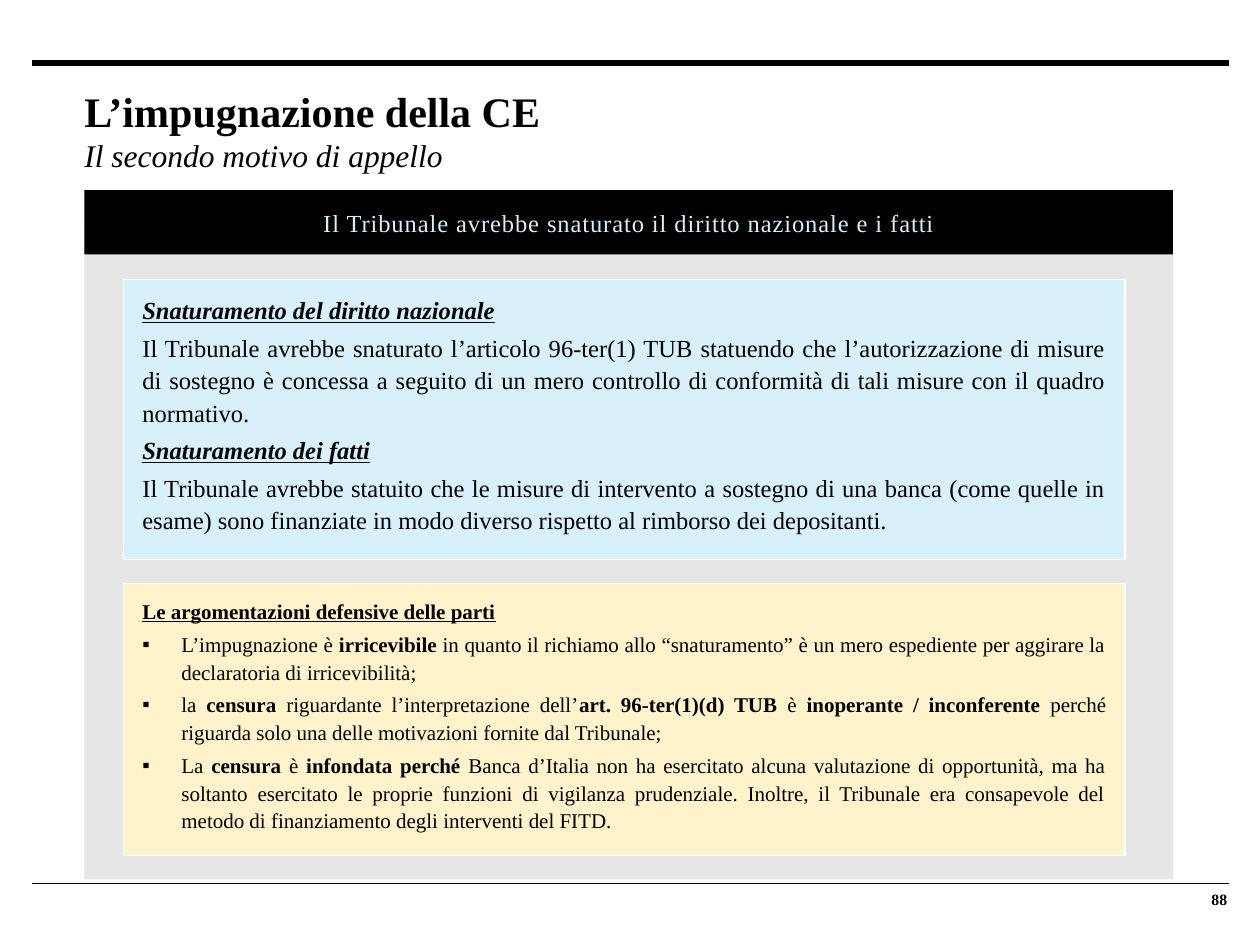
from lxml import etree
from pptx import Presentation
from pptx.dml.color import RGBColor
from pptx.enum import shapes, text
from pptx.oxml.ns import qn
from pptx.util import Pt

FONT = "Times New Roman"
BLACK, WHITE, GREY = "000000", "FFFFFF", "E6E6E6"
SKY, CREAM = "D7F0FA", "FFF3CB"
PANEL_LEFT, PANEL_WIDTH = 48.24, 622.08
CARD_LEFT, CARD_WIDTH = 70.56, 572.4
BULLET_INDENT = 22.3

# A paragraph is a list of (text, style) runs; style letters: b bold, i italic, u underlined.
DISTORTION = [
    [("Snaturamento del diritto nazionale", "biu")],
    [("Il Tribunale avrebbe snaturato l’articolo 96-ter(1) TUB statuendo che "
      "l’autorizzazione di misure di sostegno è concessa a seguito di un mero "
      "controllo di conformità di tali misure con il quadro normativo.", "")],
    [("Snaturamento dei fatti", "biu")],
    [("Il Tribunale avrebbe statuito che le misure di intervento a sostegno di una "
      "banca (come quelle in esame) sono finanziate in modo diverso rispetto al "
      "rimborso dei depositanti.", "")],
]
DEFENCE_HEADING = [[("Le argomentazioni defensive delle parti", "bu")]]
DEFENCE_POINTS = [
    [("L’impugnazione è ", ""), ("irricevibile", "b"),
     (" in quanto il richiamo allo “snaturamento” è un mero espediente per aggirare "
      "la declaratoria di irricevibilità;", "")],
    [("la ", ""), ("censura", "b"), (" riguardante l’interpretazione dell’", ""),
     ("art. 96-ter(1)(d) TUB ", "b"), ("è ", ""), ("inoperante / inconferente ", "b"),
     ("perché riguarda solo una delle motivazioni fornite dal Tribunale;", "")],
    [("La ", ""), ("censura", "b"), (" è ", ""), ("infondata perché ", "b"),
     ("Banca d’Italia non ha esercitato alcuna valutazione di opportunità, ma ha "
      "soltanto esercitato le proprie funzioni di vigilanza prudenziale. Inoltre, il "
      "Tribunale era consapevole del metodo di finanziamento degli interventi del "
      "FITD.", "")],
]


def rgb(hex_colour):
    return RGBColor.from_string(hex_colour)


def add_rule(slide, y, weight):
    rule = slide.shapes.add_connector(
        shapes.MSO_CONNECTOR.STRAIGHT, Pt(18), Pt(y), Pt(702), Pt(y))
    rule.line.color.rgb = rgb(BLACK)
    rule.line.width = Pt(weight)
    etree.SubElement(rule._element.spPr, qn("a:effectLst"))


def add_block(slide, left, top, width, height, fill, outline=None):
    block = slide.shapes.add_shape(
        shapes.MSO_SHAPE.RECTANGLE, Pt(left), Pt(top), Pt(width), Pt(height))
    block.shadow.inherit = False
    block.fill.solid()
    block.fill.fore_color.rgb = rgb(fill)
    if outline:
        block.line.color.rgb = rgb(outline)
        block.line.width = Pt(0.75)
    else:
        block.line.fill.background()
    return block


def set_frame(frame, horizontal, vertical, anchor=text.MSO_ANCHOR.TOP):
    frame.word_wrap = True
    frame.vertical_anchor = anchor
    frame.margin_left = frame.margin_right = Pt(horizontal)
    frame.margin_top = frame.margin_bottom = Pt(vertical)


def add_text_frame(slide, left, top, width, height, anchor=text.MSO_ANCHOR.TOP):
    frame = slide.shapes.add_textbox(
        Pt(left), Pt(top), Pt(width), Pt(height)).text_frame
    set_frame(frame, 0, 0, anchor)
    return frame


def write(paragraph, runs, size, colour=BLACK, align=text.PP_ALIGN.LEFT):
    paragraph.alignment = align
    for words, style in runs:
        run = paragraph.add_run()
        run.text = words
        font = run.font
        font.name, font.size = FONT, Pt(size)
        font.color.rgb = rgb(colour)
        font.bold, font.italic, font.underline = (mark in style for mark in "biu")


def add_bullet(paragraph):
    properties = paragraph._p.get_or_add_pPr()
    properties.set("marL", str(Pt(BULLET_INDENT)))
    properties.set("indent", str(-Pt(BULLET_INDENT)))
    etree.SubElement(properties, qn("a:buFont"), typeface=FONT)
    etree.SubElement(properties, qn("a:buChar"), char="▪")


def add_card(slide, top, height, fill, size, plain, bulleted=()):
    """Outlined box of justified paragraphs, the bulleted ones last."""
    frame = add_block(slide, CARD_LEFT, top, CARD_WIDTH, height, fill, WHITE).text_frame
    set_frame(frame, 10.8, 7.2)
    for index, runs in enumerate([*plain, *bulleted]):
        paragraph = frame.add_paragraph() if index else frame.paragraphs[0]
        if index >= len(plain):
            add_bullet(paragraph)
        write(paragraph, runs, size, align=text.PP_ALIGN.JUSTIFY)
        paragraph.line_spacing = 1.1
        paragraph.space_after = Pt(3)


def add_title(slide):
    frame = add_text_frame(slide, PANEL_LEFT, 48.96, 670, 71.28)
    write(frame.paragraphs[0], [("L’impugnazione della CE", "b")], 24)
    write(frame.add_paragraph(), [("Il secondo motivo di appello", "i")], 18)


def add_banner(slide):
    frame = add_block(slide, PANEL_LEFT, 108.72, PANEL_WIDTH, 36.72, BLACK).text_frame
    set_frame(frame, 7.2, 3.6, text.MSO_ANCHOR.MIDDLE)
    claim = frame.paragraphs[0]
    write(claim, [("Il Tribunale avrebbe snaturato il diritto nazionale e i fatti", "")],
          14, SKY, text.PP_ALIGN.CENTER)
    claim.runs[0].font._element.set("spc", "50")


def add_page_number(slide):
    frame = add_text_frame(slide, 653.76, 504.72, 47.52, 18.72, text.MSO_ANCHOR.MIDDLE)
    write(frame.paragraphs[0], [("88", "b")], 9, align=text.PP_ALIGN.RIGHT)


def main():
    deck = Presentation()
    deck.slide_width, deck.slide_height = Pt(720), Pt(540)
    slide = deck.slides.add_slide(deck.slide_layouts[6])
    add_page_number(slide)
    add_rule(slide, 36, 3)
    add_rule(slide, 504.72, 0.5)
    add_title(slide)
    add_block(slide, PANEL_LEFT, 129.6, PANEL_WIDTH, 372.96, GREY)
    add_banner(slide)
    add_card(slide, 159.84, 159.84, SKY, 14, DISTORTION)
    add_card(slide, 333.36, 155.52, CREAM, 12, DEFENCE_HEADING, DEFENCE_POINTS)
    deck.save("out.pptx")


if __name__ == "__main__":
    main()
